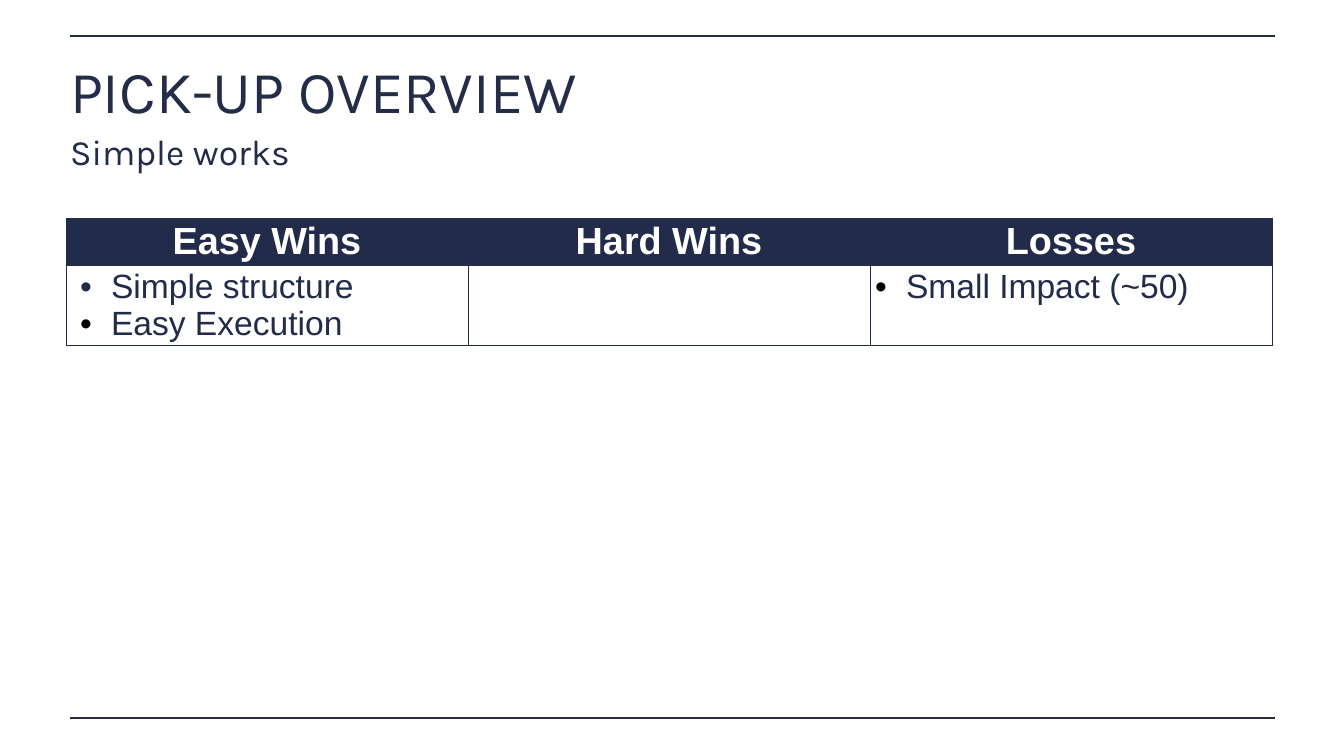
from dataclasses import dataclass

from lxml import etree
from pptx import Presentation
from pptx.dml.color import RGBColor
from pptx.enum.shapes import MSO_CONNECTOR
from pptx.enum.text import MSO_ANCHOR, MSO_AUTO_SIZE, PP_ALIGN
from pptx.oxml.ns import qn
from pptx.util import Pt

STRAIGHT = MSO_CONNECTOR.STRAIGHT
TOP = MSO_ANCHOR.TOP
NO_AUTOFIT = MSO_AUTO_SIZE.NONE
LEFT, CENTER = PP_ALIGN.LEFT, PP_ALIGN.CENTER
EMU_PER_PX = 914400 / 50.4
TITLE_AND_TEXT_LAYOUT = 2


@dataclass(frozen=True)
class Theme:
    rule: str = "232D48"
    navy: str = "222C4A"
    white: str = "FFFFFF"
    black: str = "000000"
    heading_font: str = "Karla"
    table_font: str = "Arial"
    title_size: float = 85
    subtitle_size: float = 50.9
    header_size: float = 54
    item_size: float = 48
    rule_width: float = 2
    border_width: float = 1


THEME = Theme()

HEADERS = ["Easy Wins", "Hard Wins", "Losses"]
# For each column: left margin in px, then (text, bullet colour) items
COLUMNS = [
    (40, [("Simple structure", THEME.navy), ("Easy Execution", THEME.black)]),
    (0, []),
    (31, [("Small Impact (~50)", THEME.black)]),
]
HANGING = 31


def px(n):
    return round(n * EMU_PER_PX)


def add_run(p, text, font, size, color, bold=False):
    r = p.add_run()
    r.text = text
    r.font.name = font
    r.font.size = Pt(size)
    r.font.bold = bold
    r.font.color.rgb = RGBColor.from_string(color)


def add_rule(slide, y):
    line = slide.shapes.add_connector(STRAIGHT, px(70), px(y), px(1275), px(y))
    line.line.color.rgb = RGBColor.from_string(THEME.rule)
    line.line.width = Pt(THEME.rule_width)
    etree.SubElement(line._element.spPr, qn("a:effectLst"))


def fill_placeholder(sp, box, text, size, color):
    sp.left, sp.top, sp.width, sp.height = map(px, box)
    tf = sp.text_frame
    tf.margin_left = tf.margin_right = tf.margin_top = tf.margin_bottom = px(3)
    tf.vertical_anchor = TOP
    tf.auto_size = NO_AUTOFIT
    tf.word_wrap = True
    p = tf.paragraphs[0]
    p.alignment = LEFT
    p.line_spacing = 0.8
    p.space_before = Pt(0)
    add_run(p, text, THEME.heading_font, size, color)


def set_borders(cell):
    tc_pr = cell._tc.get_or_add_tcPr()
    for i, side in enumerate(("lnL", "lnR", "lnT", "lnB")):
        ln = etree.Element(qn(f"a:{side}"), w=str(Pt(THEME.border_width)))
        fill = etree.SubElement(ln, qn("a:solidFill"))
        etree.SubElement(fill, qn("a:srgbClr"), val=THEME.navy)
        tc_pr.insert(i, ln)


def set_bullet(p, margin, color):
    p_pr = p._p.get_or_add_pPr()
    p_pr.set("marL", str(px(margin)))
    p_pr.set("indent", str(-px(HANGING)))
    bu_clr = etree.SubElement(p_pr, qn("a:buClr"))
    etree.SubElement(bu_clr, qn("a:srgbClr"), val=color)
    etree.SubElement(p_pr, qn("a:buFont"), typeface=THEME.table_font)
    etree.SubElement(p_pr, qn("a:buChar"), char="•")


def fill_header(cell, text):
    cell.fill.solid()
    cell.fill.fore_color.rgb = RGBColor.from_string(THEME.navy)
    p = cell.text_frame.paragraphs[0]
    p.alignment = CENTER
    add_run(p, text, THEME.table_font, THEME.header_size, THEME.white, bold=True)


def fill_items(cell, margin, items):
    cell.fill.background()
    tf = cell.text_frame
    for i, (text, bullet_color) in enumerate(items):
        p = tf.add_paragraph() if i else tf.paragraphs[0]
        set_bullet(p, margin, bullet_color)
        add_run(p, text, THEME.table_font, THEME.item_size, THEME.navy)


def add_wins_table(slide):
    col_width, row_heights = 402, (47, 80)
    frame = slide.shapes.add_table(
        len(row_heights), len(HEADERS), px(66), px(218),
        px(col_width * len(HEADERS)), px(sum(row_heights)))
    table = frame.table
    table.horz_banding = False
    for row, height in zip(table.rows, row_heights):
        row.height = px(height)
    for i, (header, (margin, items)) in enumerate(zip(HEADERS, COLUMNS)):
        table.columns[i].width = px(col_width)
        fill_header(table.cell(0, i), header)
        fill_items(table.cell(1, i), margin, items)
    for cell in table.iter_cells():
        set_borders(cell)


def main():
    prs = Presentation()
    prs.slide_width, prs.slide_height = px(1344), px(756)
    slide = prs.slides.add_slide(prs.slide_layouts[TITLE_AND_TEXT_LAYOUT])
    for y in (36, 718):
        add_rule(slide, y)
    fill_placeholder(slide.shapes.title, (67, 65, 1205, 83),
                     "PICK-UP OVERVIEW", THEME.title_size, THEME.rule)
    fill_placeholder(slide.placeholders[1], (67, 135, 1211, 44),
                     "Simple works", THEME.subtitle_size, THEME.navy)
    add_wins_table(slide)
    prs.save("out.pptx")


if __name__ == "__main__":
    main()
